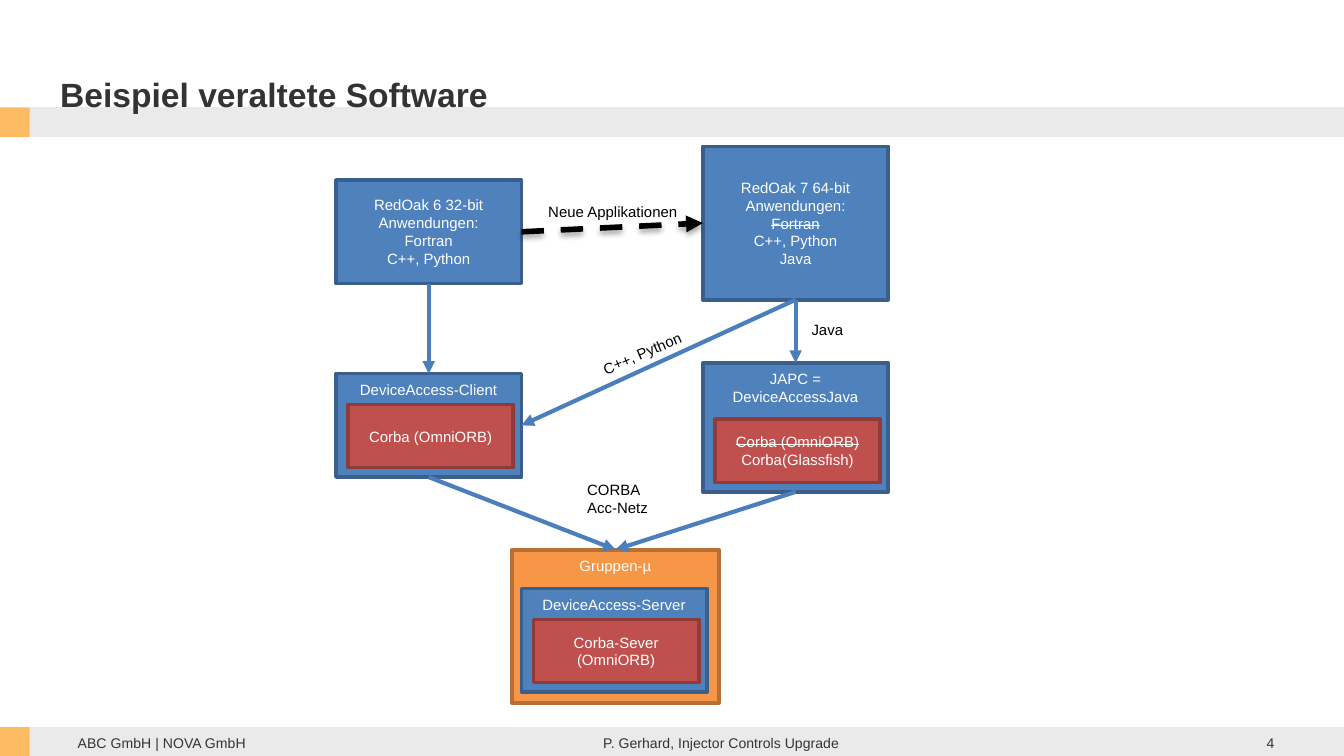
from lxml import etree
from pptx import Presentation
from pptx.dml.color import RGBColor
from pptx.enum.dml import MSO_LINE
from pptx.enum.shapes import MSO_CONNECTOR, MSO_SHAPE
from pptx.enum.text import MSO_ANCHOR, MSO_AUTO_SIZE, PP_ALIGN
from pptx.oxml.ns import qn
from pptx.util import Inches, Pt

BLUE = ("4F81BD", "3A5F8C")
RED = ("C0504D", "8E3B39")
ORANGE = ("F79646", "B76F34")
TOP, LEFT, BOTTOM, RIGHT = range(4)


def color(value):
    return RGBColor.from_string(value)


def write(shape, lines, size=8, ink="FFFFFF", bold=False, align=PP_ALIGN.CENTER,
          anchor=MSO_ANCHOR.MIDDLE, struck=()):
    """Write one paragraph per line; lines listed in struck are crossed out."""
    frame = shape.text_frame
    frame.word_wrap = True
    frame.vertical_anchor = anchor
    for index, line in enumerate(lines):
        paragraph = frame.paragraphs[0] if index == 0 else frame.add_paragraph()
        paragraph.alignment = align
        run = paragraph.add_run()
        run.text = line
        for name, value in {"name": "Arial", "size": Pt(size), "bold": bold}.items():
            setattr(run.font, name, value)
        run.font.color.rgb = color(ink)
        if line in struck:
            run.font._element.set("strike", "sngStrike")


def add_box(slide, box, fill, outline=None):
    shape = slide.shapes.add_shape(MSO_SHAPE.RECTANGLE, *map(Inches, box))
    shape.shadow.inherit = False
    shape.fill.solid()
    shape.fill.fore_color.rgb = color(fill)
    if outline:
        shape.line.color.rgb = color(outline)
        shape.line.width = Pt(2)
    else:
        shape.line.fill.background()
    return shape


def add_text(slide, box, lines, **style):
    shape = slide.shapes.add_textbox(*map(Inches, box))
    write(shape, lines, **style)
    return shape


def add_line(slide, start, end, ink, width):
    """Add a straight line; returns it with its empty effect list."""
    line = slide.shapes.add_connector(MSO_CONNECTOR.STRAIGHT, *map(Inches, start + end))
    line.line.color.rgb = color(ink)
    line.line.width = Pt(width)
    effects = etree.SubElement(line._element.spPr, qn("a:effectLst"))
    return line, effects


def add_arrow(slide, source, source_side, target, target_side, ink="4B7EBC", width=2.25):
    arrow, effects = add_line(slide, (0, 0), (1, 1), ink, width)
    arrow.begin_connect(source, source_side)
    arrow.end_connect(target, target_side)
    etree.SubElement(arrow.line._get_or_add_ln(), qn("a:tailEnd"), type="triangle")
    return arrow, effects


def add_band(slide, top):
    """Grey band across the slide with an orange square at its left end."""
    size = 0.22
    middle = top + size / 2
    add_line(slide, (0, middle), (10, middle), "EAEAEA", 16)
    add_box(slide, (0, top, size, size), "FDBB63")


def add_header(slide, box):
    left, top, width, height = box
    add_band(slide, top + height - 0.1)
    add_text(slide, box, ["Beispiel veraltete Software"], size=18, ink="333333",
             bold=True, align=PP_ALIGN.LEFT, anchor=MSO_ANCHOR.BOTTOM)


def add_footer(slide, top):
    add_band(slide, top)
    for left, width, text, align in (
        (0.48, 3.86, "ABC GmbH | NOVA GmbH", PP_ALIGN.LEFT),
        (4.39, 3.43, "P. Gerhard, Injector Controls Upgrade", PP_ALIGN.LEFT),
        (8.77, 0.81, "4", PP_ALIGN.RIGHT),
    ):
        add_text(slide, (left, top, width, 0.24), [text], size=7.5, ink="333333", align=align)


def add_application(slide, box, lines, struck=()):
    shape = add_box(slide, box, *BLUE)
    write(shape, lines, struck=struck)
    return shape


def add_device_access(slide, box, heading, corba_lines, struck=()):
    """Blue layer with its red Corba block near the lower edge."""
    left, top, width, height = box
    layer = add_box(slide, box, *BLUE)
    write(layer, [heading], anchor=MSO_ANCHOR.TOP)
    corba = add_box(slide, (left + 0.09, top + height - 0.54, 1.23, 0.47), *RED)
    write(corba, corba_lines, struck=struck)
    return layer


def add_group_server(slide, box):
    left, top, width, height = box
    group = add_box(slide, box, *ORANGE)
    write(group, ["Gruppen-µ"], anchor=MSO_ANCHOR.TOP)
    add_device_access(slide, (left + 0.07, top + 0.29, 1.38, 0.77),
                      "DeviceAccess-Server", ["Corba-Sever (OmniORB)"])
    return group


def add_migration_arrow(slide, old, new):
    """Dashed black arrow with a soft shadow below."""
    arrow, effects = add_arrow(slide, old, RIGHT, new, LEFT, "000000", 3)
    arrow.line.dash_style = MSO_LINE.DASH
    shadow = etree.SubElement(effects, qn("a:outerShdw"), blurRad=str(Pt(3.1)),
                              dist=str(Pt(1.8)), dir="5400000", rotWithShape="0")
    ink = etree.SubElement(shadow, qn("a:srgbClr"), val="000000")
    etree.SubElement(ink, qn("a:alpha"), val="35000")


def add_label(slide, box, lines, align=PP_ALIGN.LEFT, rotation=0):
    label = add_text(slide, box, lines, ink="000000", align=align, anchor=MSO_ANCHOR.TOP)
    label.text_frame.word_wrap = False
    label.text_frame.auto_size = MSO_AUTO_SIZE.SHAPE_TO_FIT_TEXT
    label.rotation = rotation


def add_diagram(slide, left, top):
    """Old stack on the left, new stack on the right, shared server below."""
    width = 1.38
    right = left + 2.73

    # Boxes
    old = add_application(slide, (left, top + 0.25, width, 0.77),
                          ["RedOak 6 32-bit Anwendungen:", "Fortran", "C++, Python"])
    new = add_application(slide, (right, top, width, 1.14),
                          ["RedOak 7 64-bit Anwendungen:", "Fortran", "C++, Python", "Java"],
                          struck=["Fortran"])
    client = add_device_access(slide, (left, top + 1.69, width, 0.77),
                               "DeviceAccess-Client", ["Corba (OmniORB)"])
    japc = add_device_access(slide, (right, top + 1.61, width, 0.96),
                             "JAPC = DeviceAccessJava",
                             ["Corba (OmniORB)", "Corba(Glassfish)"],
                             struck=["Corba (OmniORB)"])
    server = add_group_server(slide, (left + 1.31, top + 3, 1.54, 1.14))

    # Arrows
    for source, source_side, target, target_side in (
        (old, BOTTOM, client, TOP),
        (client, BOTTOM, server, TOP),
        (new, BOTTOM, japc, TOP),
        (new, BOTTOM, client, RIGHT),
        (japc, BOTTOM, server, TOP),
    ):
        add_arrow(slide, source, source_side, target, target_side)
    add_migration_arrow(slide, old, new)

    # Arrow labels
    add_label(slide, (left + 1.47, top + 0.37, 1.18, 0.24), ["Neue Applikationen"],
              align=PP_ALIGN.CENTER)
    add_label(slide, (left + 3.44, top + 1.25, 0.44, 0.24), ["Java"])
    add_label(slide, (left + 1.87, top + 1.42, 0.83, 0.24), ["C++, Python"], rotation=336.9)
    add_label(slide, (left + 1.77, top + 2.44, 0.66, 0.37), ["CORBA", "Acc-Netz"])


def main():
    presentation = Presentation()
    presentation.slide_width = Inches(10)
    presentation.slide_height = Inches(10) * 9 // 16
    slide = presentation.slides.add_slide(presentation.slide_layouts[6])
    add_header(slide, (0.35, 0.25, 6.7, 0.65))
    add_footer(slide, 5.41)
    add_diagram(slide, 2.5, 1.09)
    presentation.save("out.pptx")


if __name__ == "__main__":
    main()
